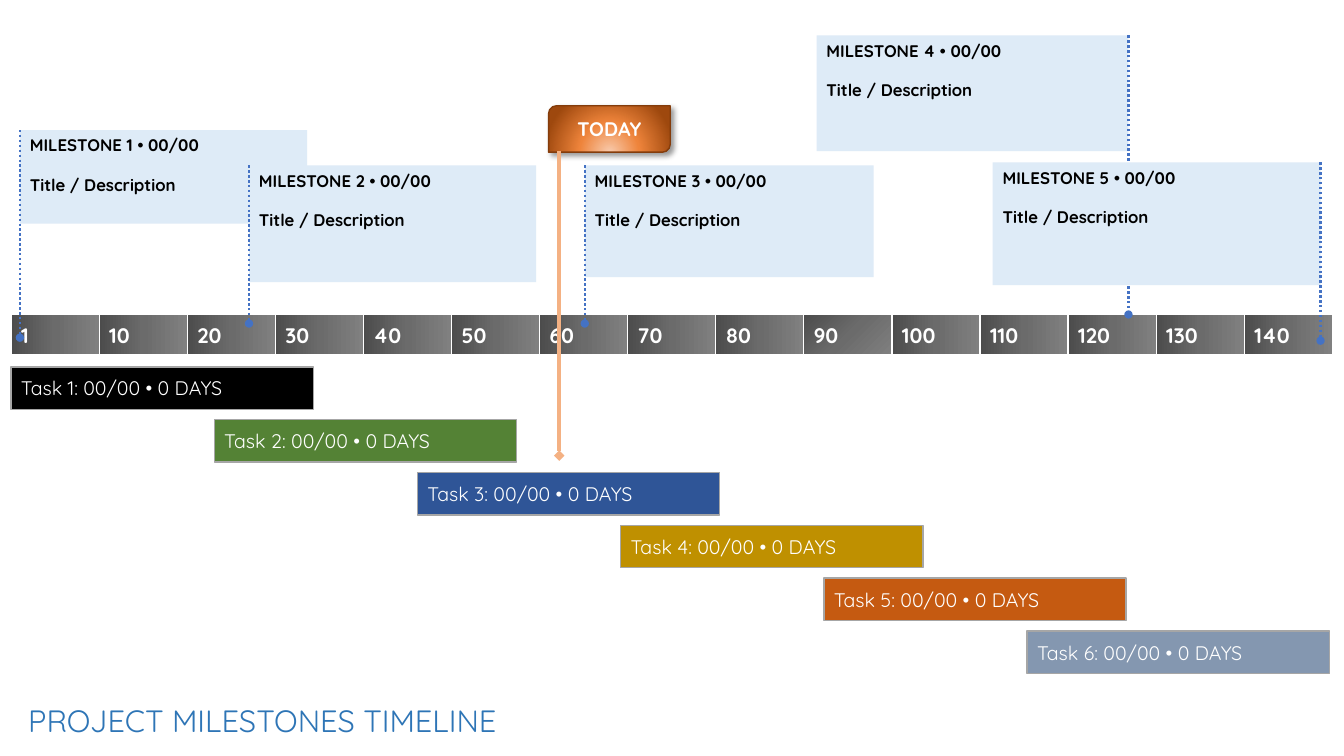
from dataclasses import dataclass

from lxml import etree
from pptx import Presentation
from pptx.dml.color import RGBColor
from pptx.enum.dml import MSO_LINE
from pptx.enum.shapes import MSO_CONNECTOR, MSO_SHAPE
from pptx.enum.text import MSO_ANCHOR, MSO_AUTO_SIZE, PP_ALIGN
from pptx.oxml import parse_xml
from pptx.oxml.ns import nsdecls, qn
from pptx.util import Inches, Pt

RECTANGLE, FLAG = MSO_SHAPE.RECTANGLE, MSO_SHAPE.ROUND_2_DIAG_RECTANGLE
STRAIGHT, DOTTED = MSO_CONNECTOR.STRAIGHT, MSO_LINE.ROUND_DOT
TOP, MIDDLE = MSO_ANCHOR.TOP, MSO_ANCHOR.MIDDLE
LEFT, CENTER = PP_ALIGN.LEFT, PP_ALIGN.CENTER
NO_FIT = MSO_AUTO_SIZE.NONE

FONT = "Quicksand"
COLORS = {
    "white": "FFFFFF", "black": "000000", "title": "2E75B6",
    "milestone": "DEEBF7", "marker": "4472C4", "task_edge": "A6A6A6",
    "today_edge": "843C0B", "today_line": "F4B183",
}
AXIS_STOPS = ((0, "4C4C4C"), (50, "6B6B6B"), (100, "808080"))
TODAY_STOPS = ((0, "F8CBAD"), (46, "EE843B"), (100, "9E480E"))
TODAY_PATH = ('<a:path path="circle"><a:fillToRect l="50000" t="130000" '
              'r="50000" b="-30000"/></a:path>')

AXIS_LEFT = 0.11
COLUMN_WIDTH = 0.874
ROW_HEIGHT = 0.1
DAYS = ("1", *(str(day) for day in range(10, 150, 10)))
TASK_COLORS = ("000000", "548235", "2F5597", "BF9000", "C55A11", "8497B0")


@dataclass(frozen=True)
class Area:
    column: float
    row: float
    columns: float
    rows: float


@dataclass(frozen=True)
class Milestone:
    number: int
    area: Area
    marker_end: float
    marker_on_right: bool = False


MILESTONES = (
    Milestone(1, Area(0.1, 12.9, 3.26, 9.3), 33.5),
    Milestone(2, Area(2.7, 16.4, 3.26, 11.6), 32.1),
    Milestone(3, Area(6.51, 16.4, 3.28, 11.1), 32.1),
    Milestone(4, Area(9.14, 3.5, 3.54, 11.5), 31.2, True),
    Milestone(5, Area(11.14, 16.1, 3.72, 12.2), 33.8, True),
)


def across(column: float) -> int:
    return Inches(AXIS_LEFT + column * COLUMN_WIDTH)


def down(row: float) -> int:
    return Inches(row * ROW_HEIGHT)


def place(area: Area) -> tuple[int, int, int, int]:
    return (across(area.column), down(area.row),
            Inches(area.columns * COLUMN_WIDTH), down(area.rows))


def color(name: str) -> RGBColor:
    return RGBColor.from_string(COLORS.get(name, name))


def gradient(stops: tuple, direction: str):
    marks = "".join(f'<a:gs pos="{share * 1000}"><a:srgbClr val="{tint}"/></a:gs>'
                    for share, tint in stops)
    return parse_xml(f'<a:gradFill {nsdecls("a")} rotWithShape="1">'
                     f'<a:gsLst>{marks}</a:gsLst>{direction}</a:gradFill>')


def write(frame, lines: tuple, size: float, tint: str, bold: bool = False,
          align=LEFT, anchor=MIDDLE, gap: float = 0) -> None:
    frame.word_wrap = True
    frame.auto_size = NO_FIT
    frame.vertical_anchor = anchor
    for index, line in enumerate(lines):
        para = frame.add_paragraph() if index else frame.paragraphs[0]
        para.alignment = align
        para.space_before = Pt(gap if index else 0)
        span = para.add_run()
        span.text = line
        span.font.name = FONT
        span.font.size = Pt(size)
        span.font.bold = bold
        span.font.color.rgb = color(tint)


def add_box(shapes, area: Area, fill: str, edge: str = "", kind=RECTANGLE):
    box = shapes.add_shape(kind, *place(area))
    box.shadow.inherit = False
    box.fill.solid()
    box.fill.fore_color.rgb = color(fill)
    if edge:
        box.line.color.rgb = color(edge)
        box.line.width = Pt(1)
    else:
        box.line.fill.background()
    return box


def add_marker(shapes, column: float, start: float, end: float,
               tint: str, width: float, tip: str, dash=None) -> None:
    marker = shapes.add_connector(STRAIGHT, across(column), down(start),
                                  across(column), down(end))
    marker.line.color.rgb = color(tint)
    marker.line.width = Pt(width)
    if dash is not None:
        marker.line.dash_style = dash
    properties = marker.element.spPr
    etree.SubElement(properties.find(qn("a:ln")), qn("a:tailEnd"), type=tip)
    etree.SubElement(properties, qn("a:effectLst"))


def add_task(page, index: int, fill: str) -> None:
    area = Area(2.306 * index, 36.4 + 5.24 * index, 3.43, 4.2)
    box = add_box(page.shapes, area, fill, "task_edge")
    write(box.text_frame, (f"Task {index + 1}: 00/00 • 0 DAYS",), 14, "white")


def add_axis(page) -> None:
    frame = page.shapes.add_table(1, len(DAYS), *place(Area(0, 31.2, len(DAYS), 4.1)))
    table = frame.table
    table.first_row = table.horz_banding = False
    for index, day in enumerate(DAYS):
        cell = table.cell(0, index)
        write(cell.text_frame, (day,), 15, "white", bold=True)
        properties = cell._tc.get_or_add_tcPr()
        for side, width in (("L", 1), ("R", 1), ("T", 1), ("B", 3)):
            properties.append(parse_xml(
                f'<a:ln{side} {nsdecls("a")} w="{Pt(width)}"><a:solidFill>'
                f'<a:srgbClr val="{COLORS["white"]}"/></a:solidFill></a:ln{side}>'))
        angle = 45 if day == "90" else 0
        properties.append(gradient(AXIS_STOPS, f'<a:lin ang="{angle * 60000}" scaled="0"/>'))
        cell.vertical_anchor = MIDDLE


def add_today(page) -> None:
    group = page.shapes.add_group_shape()
    box = add_box(group.shapes, Area(6.1, 10.5, 1.38, 4.6), "today_line", "today_edge", FLAG)
    properties = box.element.spPr
    properties.replace(properties.find(qn("a:solidFill")),
                       gradient(TODAY_STOPS, TODAY_PATH))
    properties.find(qn("a:effectLst")).append(parse_xml(
        f'<a:outerShdw {nsdecls("a")} blurRad="{Pt(4)}" dist="{Pt(3)}" dir="2700000">'
        f'<a:srgbClr val="{COLORS["black"]}"><a:alpha val="40000"/></a:srgbClr>'
        '</a:outerShdw>'))
    write(box.text_frame, ("TODAY",), 14, "white", bold=True, align=CENTER)
    add_marker(group.shapes, 6.22, 15, 45.2, "today_line", 2.5, "diamond")


def add_milestone(page, milestone: Milestone) -> None:
    group = page.shapes.add_group_shape()
    area = milestone.area
    box = add_box(group.shapes, area, "milestone")
    write(box.text_frame, (f"MILESTONE {milestone.number} • 00/00", "Title / Description"),
          12, "black", bold=True, anchor=TOP, gap=14)
    column = area.column + (area.columns if milestone.marker_on_right else 0)
    add_marker(group.shapes, column, area.row, milestone.marker_end,
               "marker", 1.75, "oval", DOTTED)


def add_title(page) -> None:
    title = page.shapes.title
    title.left, title.top, title.width, title.height = place(Area(0.08, 69.1, 14.5, 4.7))
    write(title.text_frame, ("PROJECT MILESTONES TIMELINE",), 22, "title", anchor=TOP)


def main() -> None:
    deck = Presentation()
    deck.slide_width, deck.slide_height = Inches(13.33), Inches(7.5)
    page = deck.slides.add_slide(deck.slide_layouts.get_by_name("Title Only"))
    for index, fill in enumerate(TASK_COLORS):
        add_task(page, index, fill)
    add_axis(page)
    add_today(page)
    for milestone in MILESTONES:
        add_milestone(page, milestone)
    add_title(page)
    deck.save("out.pptx")


if __name__ == "__main__":
    main()
